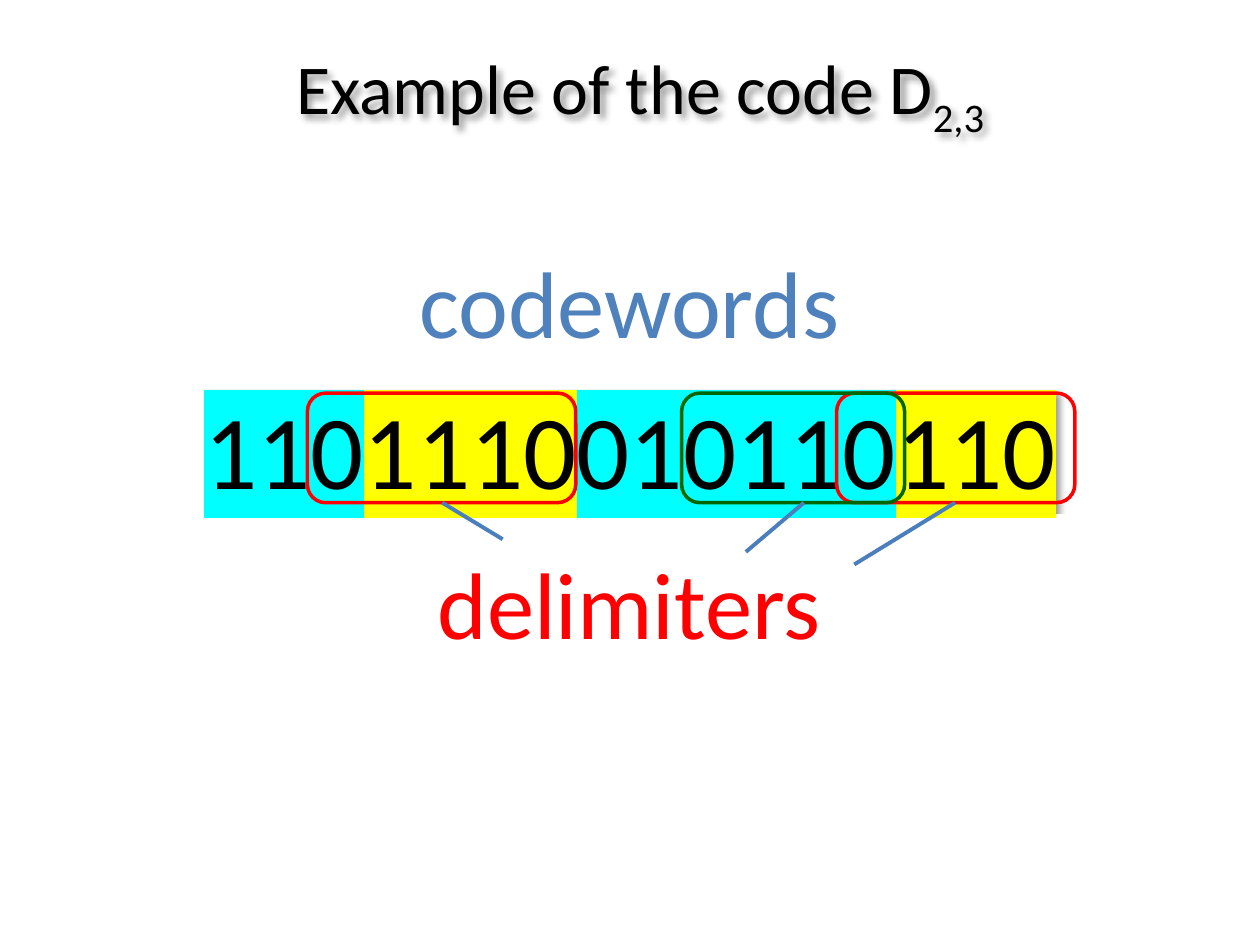
"""Build a slide that marks the codewords and delimiters in the code D2,3."""
from lxml import etree
from pptx import Presentation
from pptx.dml.color import RGBColor
from pptx.enum import shapes, text
from pptx.oxml import ns
from pptx.util import Inches, Pt

COLORS = {"black": "000000", "cyan": "00FFFF", "yellow": "FFFF00", "blue": "4F81BD",
          "red": "FF0000", "green": "006600", "pointer": "4B7EBC"}
FONT = "Calibri"
TITLE = [("Example of the code D", {}), ("2,3", {"baseline": "-25000"})]
CODEWORDS = ["110", "1110", "010110", "110"]
HIGHLIGHTS = ["cyan", "yellow"]
LABELS = [("codewords", "blue", (3.21, 1.89, 3.57, 1.01)),
          ("delimiters", "red", (3.36, 4.28, 3.27, 1.01))]
ROW_TOP, ROW_HEIGHT = 3.12, 0.87
DELIMITERS = [(2.44, 2.13, "red"), (6.64, 1.89, "red"), (5.41, 1.77, "green")]
POINTERS = [((6.78, 4.48), 7.58), ((5.92, 4.38), 6.38), ((3.99, 4.28), 3.51)]


def rgb(name):
    return RGBColor.from_string(COLORS[name])


def write(box, runs, size, color="black", wrap=True, anchor=text.MSO_ANCHOR.MIDDLE):
    frame = box.text_frame
    frame.word_wrap = wrap
    frame.vertical_anchor = anchor
    line = frame.paragraphs[0]
    line.alignment = text.PP_ALIGN.CENTER
    for words, marks in runs:
        run = line.add_run()
        run.text = words
        run.font.size = Pt(size)
        run.font.color.rgb = rgb(color)
        if "highlight" in marks:
            highlight = etree.SubElement(run.font._element, ns.qn("a:highlight"))
            etree.SubElement(highlight, ns.qn("a:srgbClr"), val=COLORS[marks["highlight"]])
        if "baseline" in marks:
            run.font._element.set("baseline", marks["baseline"])
        run.font.name = FONT


def add_shadow(box):
    effects = etree.SubElement(box._element.spPr, ns.qn("a:effectLst"))
    shadow = etree.SubElement(effects, ns.qn("a:outerShdw"), blurRad="50800", dist="38100",
                              dir="2700000", algn="tl", rotWithShape="0")
    black = etree.SubElement(shadow, ns.qn("a:srgbClr"), val=COLORS["black"])
    etree.SubElement(black, ns.qn("a:alpha"), val="40000")


def main():
    deck = Presentation()
    deck.slide_width, deck.slide_height = Inches(10), Inches(7.5)
    slide = deck.slides.add_slide(deck.slide_layouts[5])

    title = slide.shapes.title
    title.left, title.top, title.width, title.height = map(Inches, (0.39, 0.3, 9.38, 0.87))
    write(title, TITLE, 40)
    add_shadow(title)

    code = slide.shapes.add_textbox(*map(Inches, (0.31, ROW_TOP, 9.38, ROW_HEIGHT)))
    write(code, [(word, {"highlight": HIGHLIGHTS[i % 2]}) for i, word in enumerate(CODEWORDS)], 60)
    add_shadow(code)

    for words, color, place in LABELS:
        label = slide.shapes.add_textbox(*map(Inches, place))
        write(label, [(words, {})], 54, color=color, wrap=False, anchor=text.MSO_ANCHOR.TOP)
        label.text_frame.auto_size = text.MSO_AUTO_SIZE.SHAPE_TO_FIT_TEXT

    for left, width, color in DELIMITERS:
        delimiter = slide.shapes.add_shape(shapes.MSO_SHAPE.ROUNDED_RECTANGLE,
                                           *map(Inches, (left, ROW_TOP, width, ROW_HEIGHT)))
        delimiter.shadow.inherit = False
        delimiter.fill.background()
        delimiter.line.color.rgb = rgb(color)
        delimiter.line.width = Pt(2)

    for start, end_x in POINTERS:
        ends = (*start, end_x, ROW_TOP + ROW_HEIGHT)
        pointer = slide.shapes.add_connector(shapes.MSO_CONNECTOR.STRAIGHT, *map(Inches, ends))
        pointer.line.color.rgb = rgb("pointer")
        pointer.line.width = Pt(2.25)
        etree.SubElement(pointer._element.spPr, ns.qn("a:effectLst"))

    deck.save("out.pptx")


if __name__ == "__main__":
    main()
